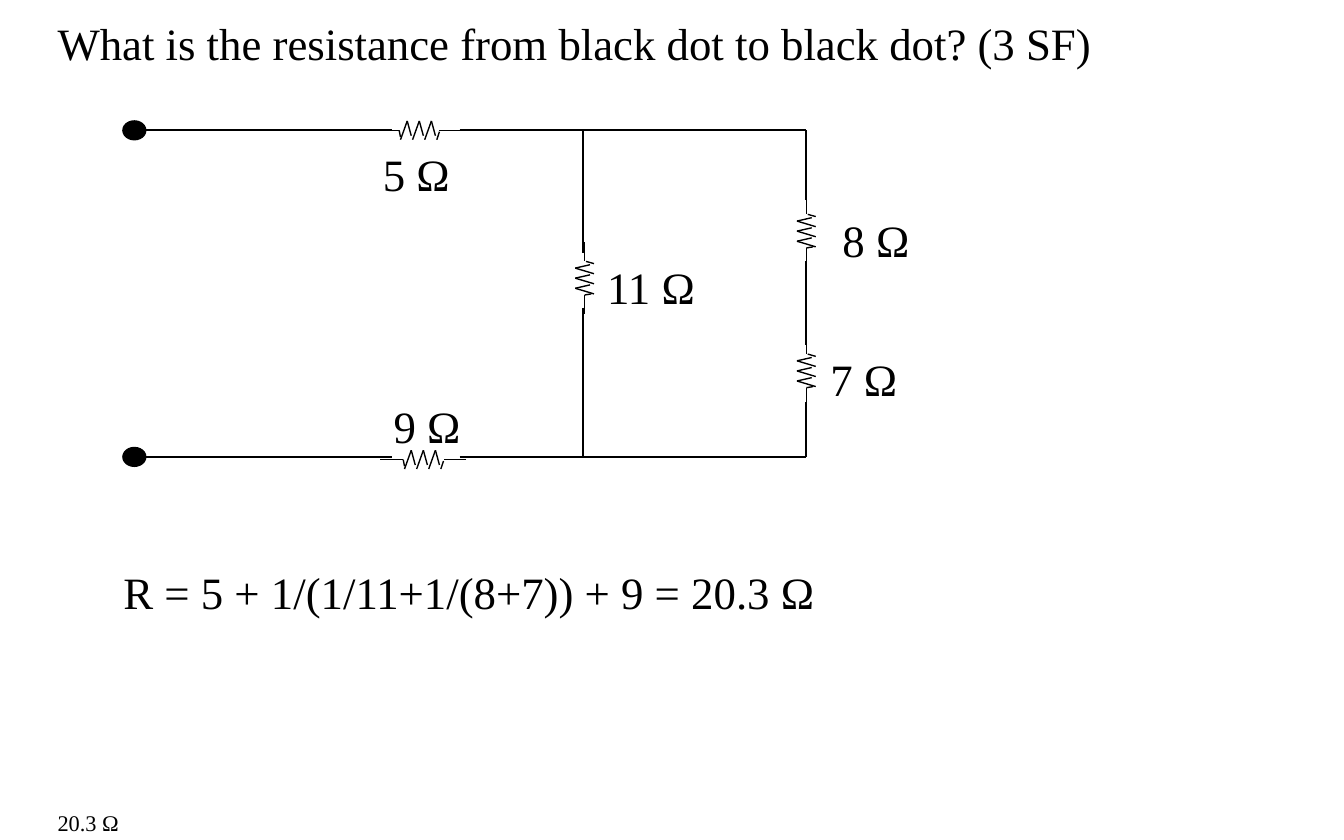
from dataclasses import dataclass

from lxml import etree
from pptx import Presentation
from pptx.dml.color import RGBColor
from pptx.enum.shapes import MSO_CONNECTOR, MSO_SHAPE
from pptx.enum.text import MSO_AUTO_SIZE
from pptx.oxml.ns import qn
from pptx.util import Emu, Pt

STRAIGHT = MSO_CONNECTOR.STRAIGHT
OVAL = MSO_SHAPE.OVAL
FIT_SHAPE = MSO_AUTO_SIZE.SHAPE_TO_FIT_TEXT
PX = 9144  # EMU in one px, 100 px to the inch


@dataclass(frozen=True)
class Theme:
    ink: RGBColor = RGBColor(0, 0, 0)
    font: str = "Times New Roman"
    body: int = 24
    small: int = 12
    wire: float = 1
    thin: float = 0.75


THEME = Theme()
SLIDE_SIZE = (1000, 625)

# Text, (left, top, width, height), type size, wrap
TEXTS = [
    ("What is the resistance from black dot to black dot? (3 SF)",
     (33, 7, 933, 50), THEME.body, True),
    ("R = 5 + 1/(1/11+1/(8+7)) + 9 = 20.3 Ω", (82, 415, 540, 50), THEME.body, False),
    ("20.3 Ω", (33, 597, 67, 30), THEME.small, False),
]

# Ohms, centre, vertical, left and top of label, width of label
RESISTORS = [
    (5, (312, 97), False, (275, 104), 71),
    (9, (315, 342), False, (283, 292), 71),
    (11, (435, 207), True, (442, 188), 87),
    (8, (600, 172), True, (617, 153), 71),
    (7, (600, 276), True, (608, 257), 71),
]
LABEL_HEIGHT = 50

TOP, BOTTOM = 97, 340
START, MIDDLE, RIGHT = 100, 434, 600
DOT_SIZE = (17, 14)
WIRES = [
    *[wire for y in (TOP, BOTTOM)
      for wire in (((START, y), (292, y)), ((342, y), (RIGHT, y)))],
    ((MIDDLE, TOP), (MIDDLE, 188)),
    ((MIDDLE, 229), (MIDDLE, BOTTOM)),
    ((RIGHT, TOP), (RIGHT, 149)),
    ((RIGHT, 194), (RIGHT, 257)),
    ((RIGHT, 299), (RIGHT, BOTTOM)),
]

# Strokes as (along, across) offsets from the centre: three teeth, ends, leads
ZIGZAG = [
    *[stroke for peak in (9, 0, -9)
      for stroke in (((peak + 3, 4), (peak, -7)), ((peak, -7), (peak - 5, 7)))],
    ((-14, 5), (-15, 0)),
    ((15, 1), (13, 7)),
    ((-15, 0), (-32, 0)),
    ((32, 0), (15, 0)),
]
VERTICAL_SCALE = 5 / 6


def emu(*lengths):
    return [Emu(round(length * PX)) for length in lengths]


def add_line(shapes, start, end, width):
    line = shapes.add_connector(STRAIGHT, *emu(*start, *end))
    line.line.color.rgb = THEME.ink
    line.line.width = Pt(width)
    etree.SubElement(line._element.spPr, qn("a:effectLst"))


def add_text(shapes, text, box, size, wrap=False):
    text_box = shapes.add_textbox(*emu(*box))
    frame = text_box.text_frame
    frame.text = text
    frame.word_wrap = wrap
    frame.auto_size = FIT_SHAPE
    font = frame.paragraphs[0].runs[0].font
    font.name = THEME.font
    font.size = Pt(size)
    font.color.rgb = THEME.ink


def add_dot(shapes, x, y):
    width, height = DOT_SIZE
    dot = shapes.add_shape(OVAL, *emu(x - width / 2, y - height / 2, width, height))
    dot.shadow.inherit = False
    dot.fill.solid()
    dot.fill.fore_color.rgb = THEME.ink
    dot.line.color.rgb = THEME.ink
    dot.line.width = Pt(THEME.thin)


def add_resistor(shapes, centre, vertical):
    """Draw the zigzag as one group; a vertical one is turned and shortened."""
    x, y = centre

    def place(along, across):
        if vertical:
            return x + across, y - along * VERTICAL_SCALE
        return x + along, y + across

    group = shapes.add_group_shape()
    for start, end in ZIGZAG:
        add_line(group.shapes, place(*start), place(*end), THEME.thin)


def main():
    presentation = Presentation()
    presentation.slide_width, presentation.slide_height = emu(*SLIDE_SIZE)
    slide = presentation.slides.add_slide(presentation.slide_layouts[6])
    shapes = slide.shapes

    for text, box, size, wrap in TEXTS:
        add_text(shapes, text, box, size, wrap)
    for y in (TOP, BOTTOM):
        add_dot(shapes, START, y)
    for start, end in WIRES:
        add_line(shapes, start, end, THEME.wire)
    for ohms, centre, vertical, corner, width in RESISTORS:
        add_resistor(shapes, centre, vertical)
        add_text(shapes, f"{ohms} Ω", (*corner, width, LABEL_HEIGHT), THEME.body)

    presentation.save("out.pptx")


if __name__ == "__main__":
    main()
